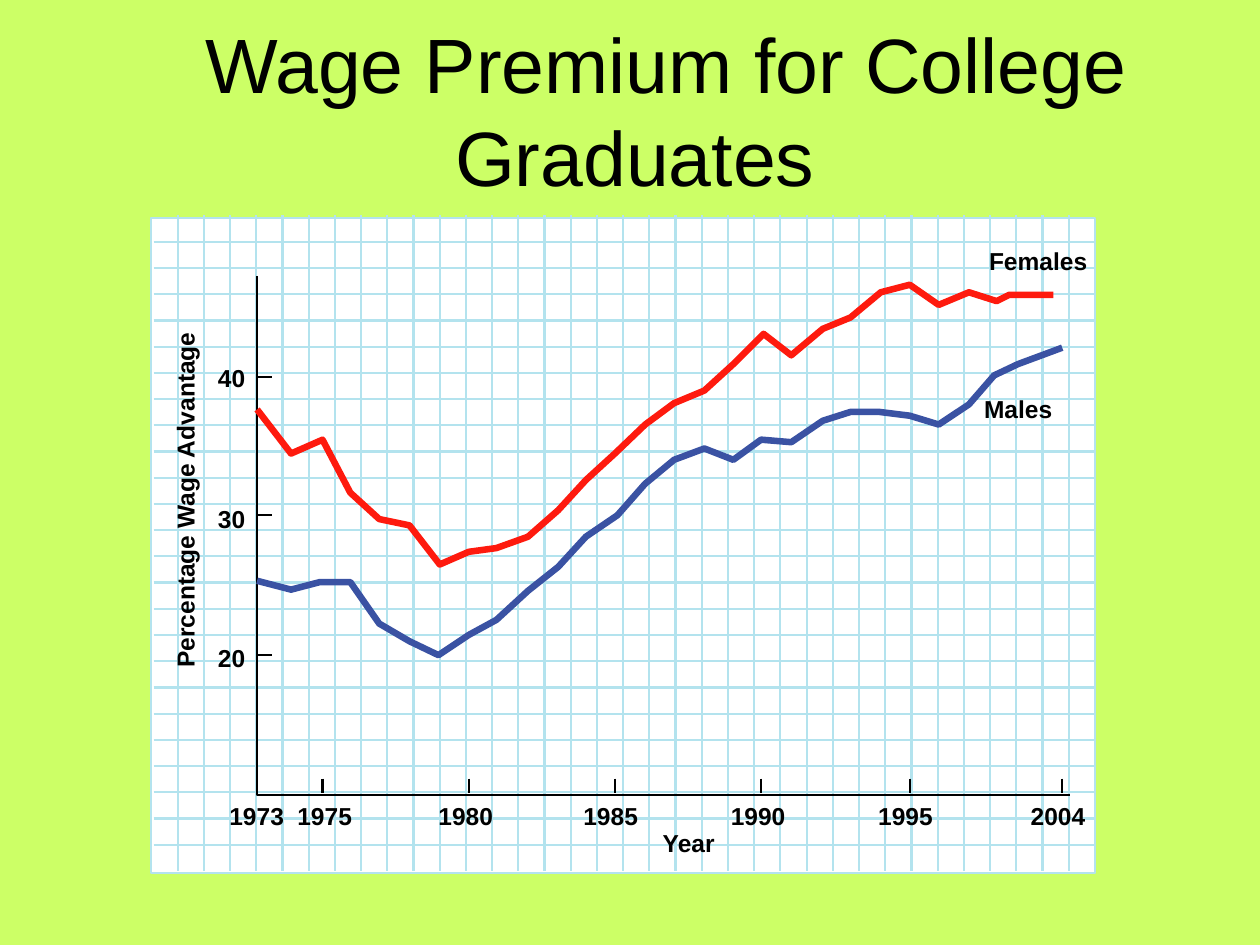
from lxml.etree import SubElement
from pptx import Presentation
from pptx.dml.color import RGBColor as Rgb
from pptx.enum.shapes import MSO_CONNECTOR as Link, MSO_SHAPE as Kind
from pptx.enum.text import MSO_ANCHOR as Anchor, PP_ALIGN as Align
from pptx.oxml.ns import qn
from pptx.util import Pt

SCALE = 9144
COLORS = {
    "back": "CCFF66", "paper": "FFFFFF", "grid": "B3E3EE", "ink": "000000",
    "female": "FE1A0E", "male": "3A52A3",
}
LEFT, TOP, WIDTH, HEIGHT = 120, 173, 749, 520
STEP, ROWS, COLS = 20.8, 24, 35
AXIS_X, AXIS_Y = 204, 631
WAGES = [(40, 299, 288), (30, 409, 400), (20, 520, 510)]
YEARS = [(1975, 256, 236), (1980, 372, 348), (1985, 488, 463),
         (1990, 604, 580), (1995, 722, 697), (2004, 843, 818)]
FEMALES = [
    (204, 325), (231, 360), (256, 349), (278, 391), (301, 412), (325, 417),
    (349, 448), (372, 438), (394, 435), (419, 426), (443, 405), (465, 381),
    (488, 360), (512, 337), (535, 320), (559, 310), (582, 289), (606, 265),
    (628, 282), (653, 261), (675, 252), (699, 232), (722, 226), (745, 242),
    (769, 232), (791, 239), (801, 234), (836, 234),
]
MALES = [
    (204, 461), (231, 468), (254, 462), (278, 462), (301, 495), (325, 509),
    (348, 520), (372, 504), (394, 492), (419, 469), (443, 450), (465, 426),
    (490, 409), (512, 384), (535, 365), (559, 356), (582, 365), (604, 349),
    (628, 351), (653, 334), (675, 327), (698, 327), (722, 330), (745, 337),
    (769, 321), (789, 298), (808, 289), (843, 276),
]


def px(*sizes):
    return [round(size * SCALE) for size in sizes]


def tint(name):
    return Rgb.from_string(COLORS[name])


def stroke(shape, color, width=1.25):
    shape.line.color.rgb = tint(color)
    shape.line.width = Pt(width)


def add_line(shapes, x1, y1, x2, y2, color="ink"):
    line = shapes.add_connector(Link.STRAIGHT, *px(x1, y1, x2, y2))
    stroke(line, color)
    SubElement(line._element.spPr, qn("a:effectLst"))


def add_path(shapes, points, color, width=1.25):
    pen = shapes.build_freeform(*points[0], scale=SCALE)
    pen.add_line_segments(points[1:], close=False)
    path = pen.convert_to_shape()
    path.shadow.inherit = False
    path.fill.background()
    stroke(path, color, width)


def add_sheet(shapes):
    sheet = shapes.add_shape(Kind.RECTANGLE, *px(LEFT, TOP, WIDTH, HEIGHT))
    sheet.shadow.inherit = False
    return sheet


def add_text(shapes, text, x, y, w, h=23, size=14, bold=True, turn=0,
             wrap=False, inset=(0, 0), align=Align.LEFT, anchor=Anchor.TOP,
             indent=0):
    box = shapes.add_textbox(*px(x, y, w, h))
    box.rotation = turn
    frame = box.text_frame
    frame.word_wrap = wrap
    frame.vertical_anchor = anchor
    frame.margin_left = frame.margin_right = px(inset[0])[0]
    frame.margin_top = frame.margin_bottom = px(inset[1])[0]
    para = frame.paragraphs[0]
    para.alignment = align
    if indent:
        para._p.get_or_add_pPr().set("indent", str(px(indent)[0]))
    run = para.add_run()
    run.text = text
    run.font.name = "Arial"
    run.font.size = Pt(size)
    run.font.bold = bold
    run.font.color.rgb = tint("ink")


def add_grid(shapes):
    paper = add_sheet(shapes)
    paper.fill.solid()
    paper.fill.fore_color.rgb = tint("paper")
    paper.line.fill.background()
    for row in range(ROWS):
        y = 192 + row * STEP
        add_line(shapes, 122, y, 868, y, "grid")
    for col in range(COLS):
        x = 141 + col * STEP
        add_line(shapes, x, 171, x, 691, "grid")
    border = add_sheet(shapes)
    border.fill.background()
    stroke(border, "grid")


def add_axes(shapes):
    add_path(shapes, [(AXIS_X, 219), (AXIS_X, AXIS_Y), (849, AXIS_Y)], "ink")
    add_line(shapes, AXIS_X, AXIS_Y, 216, AXIS_Y)
    for wage, y, top in WAGES:
        add_line(shapes, AXIS_X, y, 216, y)
        add_text(shapes, str(wage), 173, top, 27)
    add_text(shapes, "1973", 182, 636, 48)
    for year, x, left in YEARS:
        add_line(shapes, x, 618, x, 629)
        add_text(shapes, str(year), left, 636, 48)
    add_text(shapes, "Year", 526, 657, 48)
    add_text(shapes, "Percentage Wage Advantage", 11, 383, 271, turn=270)


def main():
    deck = Presentation()
    deck.slide_width, deck.slide_height = px(1000, 750)
    slide = deck.slides.add_slide(deck.slide_layouts[6])
    slide.background.fill.solid()
    slide.background.fill.fore_color.rgb = tint("back")
    add_text(slide.shapes, "Wage Premium for College Graduates", 25, 24, 958,
             125, size=44, bold=False, wrap=True, inset=(10, 5),
             align=Align.CENTER, anchor=Anchor.MIDDLE, indent=50)
    shapes = slide.shapes.add_group_shape().shapes
    add_grid(shapes)
    add_axes(shapes)
    add_path(shapes, FEMALES, "female", 3.75)
    add_path(shapes, MALES, "male", 3.75)
    add_text(shapes, "Females", 785, 195, 83)
    add_text(shapes, "Males", 781, 313, 59)
    deck.save("out.pptx")


if __name__ == "__main__":
    main()
